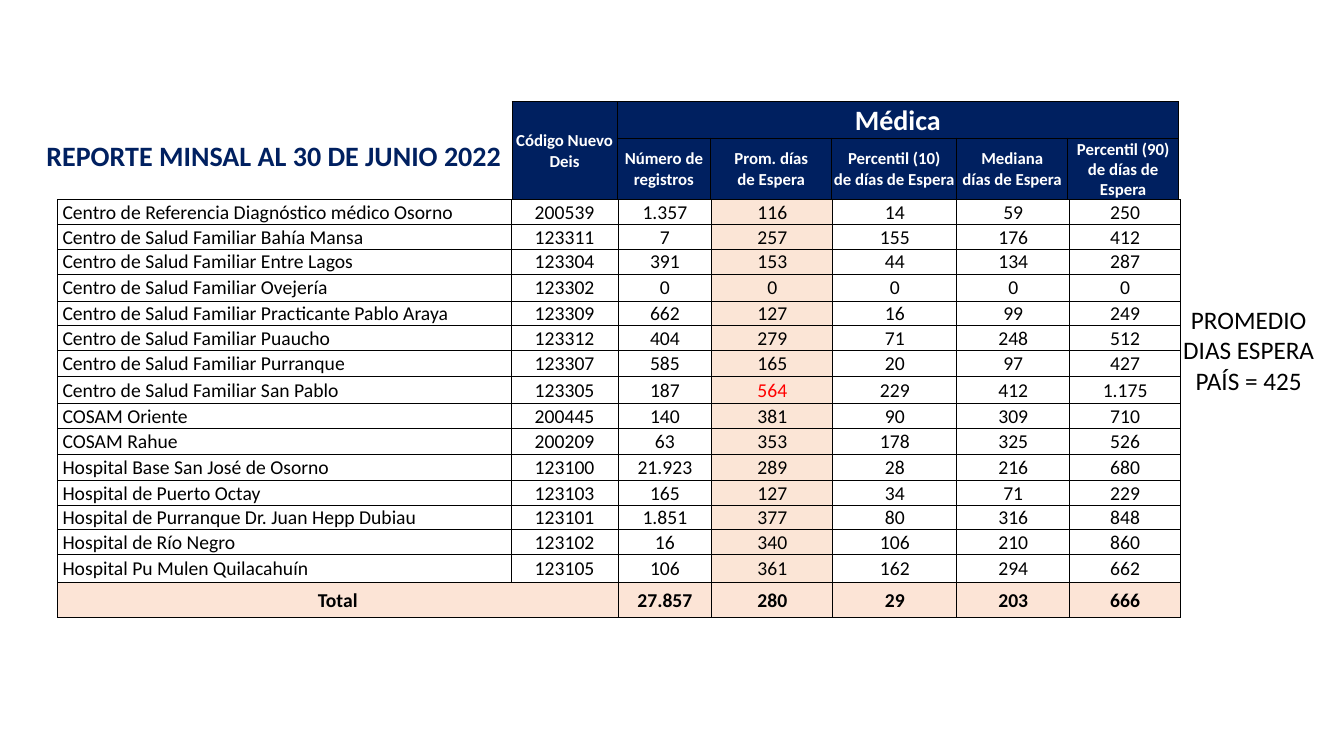
"""Build the waiting-list report slide with its medical specialities table."""
from lxml import etree
from pptx import Presentation
from pptx import util as u
from pptx.dml.color import RGBColor
from pptx.enum import text as t
from pptx.oxml import ns

PX = 9144
NAVY, BLACK, WHITE, RED = "002060", "000000", "FFFFFF", "FF0000"
PEACH, TOTAL_PEACH = "FBE5D6", "FCE4D6"
LEFT, CENTER = t.PP_ALIGN.LEFT, t.PP_ALIGN.CENTER

HEADER = [
    ["Código Nuevo Deis", "Médica", "", "", "", ""],
    ["", "Número de registros", "Prom. días\nde Espera", "Percentil (10)\nde días de Espera",
     "Mediana\ndías de Espera", "Percentil (90) de días de Espera"],
]
CENTROS = [
    ["Centro de Referencia Diagnóstico médico Osorno", "200539", "1.357", "116", "14", "59", "250"],
    ["Centro de Salud Familiar Bahía Mansa", "123311", "7", "257", "155", "176", "412"],
    ["Centro de Salud Familiar Entre Lagos", "123304", "391", "153", "44", "134", "287"],
    ["Centro de Salud Familiar Ovejería", "123302", "0", "0", "0", "0", "0"],
    ["Centro de Salud Familiar Practicante Pablo Araya", "123309", "662", "127", "16", "99", "249"],
    ["Centro de Salud Familiar Puaucho", "123312", "404", "279", "71", "248", "512"],
    ["Centro de Salud Familiar Purranque", "123307", "585", "165", "20", "97", "427"],
    ["Centro de Salud Familiar San Pablo", "123305", "187", "564", "229", "412", "1.175"],
    ["COSAM Oriente", "200445", "140", "381", "90", "309", "710"],
    ["COSAM Rahue", "200209", "63", "353", "178", "325", "526"],
    ["Hospital Base San José de Osorno", "123100", "21.923", "289", "28", "216", "680"],
    ["Hospital de Puerto Octay", "123103", "165", "127", "34", "71", "229"],
    ["Hospital de Purranque Dr. Juan Hepp Dubiau", "123101", "1.851", "377", "80", "316", "848"],
    ["Hospital de Río Negro", "123102", "16", "340", "106", "210", "860"],
    ["Hospital Pu Mulen Quilacahuín", "123105", "106", "361", "162", "294", "662"],
    ["Total", "", "27.857", "280", "29", "203", "666"],
]
TOTAL_ROW = len(CENTROS) - 1
PROM_COL = 3


def rgb(value):
    """Turn a hex string into a colour."""
    return RGBColor.from_string(value)


def header_style(row, col):
    """Give the look of one header cell."""
    size = 20 if (row, col) == (0, 1) else 12
    return dict(size=size, color=WHITE, bold=True, align=CENTER, fill=NAVY, inset=1)


def body_style(row, col):
    """Give the look of one body cell."""
    total = row == TOTAL_ROW
    name = col == 0 and not total
    return dict(
        size=14,
        color=RED if CENTROS[row][col] == "564" else BLACK,
        bold=total,
        align=LEFT if name else CENTER,
        fill=TOTAL_PEACH if total else PEACH if col == PROM_COL else None,
        inset=5 if name else 1,
    )


class Deck:
    """Hold the style and the current slide."""

    def __init__(self, width, height, font):
        """Open a presentation with one title-only slide."""
        self.prs = Presentation()
        self.prs.slide_width, self.prs.slide_height = width * PX, height * PX
        self.font = font
        self.s = self.prs.slides.add_slide(self.prs.slide_layouts[5])

    def add_text(self, tf, content, size, color, bold=False, align=LEFT):
        """Fill a text frame, one paragraph a line."""
        for i, line in enumerate(content.split("\n")):
            p = tf.add_paragraph() if i else tf.paragraphs[0]
            p.alignment = align
            r = p.add_run()
            r.text = line
            r.font.name, r.font.size, r.font.bold = self.font, u.Pt(size), bold
            r.font.color.rgb = rgb(color)

    def title(self, box, content, size, color):
        """Place and format the slide title."""
        sp = self.s.shapes.title
        sp.left, sp.top, sp.width, sp.height = [n * PX for n in box]
        tf = sp.text_frame
        tf.word_wrap, tf.auto_size = True, t.MSO_AUTO_SIZE.SHAPE_TO_FIT_TEXT
        tf.vertical_anchor = t.MSO_ANCHOR.TOP
        self.add_text(tf, content, size, color, bold=True)

    def label(self, box, content, size, color):
        """Add a centred text box."""
        tf = self.s.shapes.add_textbox(*[n * PX for n in box]).text_frame
        tf.word_wrap, tf.auto_size = True, t.MSO_AUTO_SIZE.SHAPE_TO_FIT_TEXT
        self.add_text(tf, content, size, color, align=CENTER)

    def border(self, cell, widths):
        """Draw the left, right, top and bottom edges of a cell."""
        tc_pr = cell._tc.get_or_add_tcPr()
        for side, width in zip("LRTB", widths):
            ln = etree.SubElement(tc_pr, ns.qn(f"a:ln{side}"), w=str(u.Pt(width)))
            fill = etree.SubElement(ln, ns.qn("a:solidFill"))
            etree.SubElement(fill, ns.qn("a:srgbClr"), val=BLACK)

    def table(self, left, top, cols, rows, data, style, merges, edge):
        """Add a table whose cell looks come from a style function."""
        box = [n * PX for n in (left, top, sum(cols), sum(rows))]
        tbl = self.s.shapes.add_table(len(rows), len(cols), *box).table
        tbl.first_row = tbl.horz_banding = False
        for column, width in zip(tbl.columns, cols):
            column.width = width * PX
        for line, height in zip(tbl.rows, rows):
            line.height = height * PX
        for first, last in merges:
            tbl.cell(*first).merge(tbl.cell(*last))
        for row, values in enumerate(data):
            for col, value in enumerate(values):
                cell, look = tbl.cell(row, col), style(row, col)
                outer = (col == 0, col == len(cols) - 1, row == 0, False)
                self.border(cell, [edge if out else 0.5 for out in outer])
                fill, inset = look.pop("fill"), look.pop("inset")
                if fill:
                    cell.fill.solid()
                    cell.fill.fore_color.rgb = rgb(fill)
                else:
                    cell.fill.background()
                cell.vertical_anchor = t.MSO_ANCHOR.MIDDLE
                cell.margin_left, cell.margin_right = inset * PX, PX
                cell.margin_top, cell.margin_bottom = PX, 0
                if value:
                    self.add_text(cell.text_frame, value, **look)


def main():
    """Build and save the slide."""
    deck = Deck(1333, 750, "Calibri")
    deck.table(57, 198, [450, 106, 93, 120, 123, 112, 110],
               [25, 23, 20, 27, 24, 24, 26, 27, 23, 26, 26, 23, 23, 23, 28, 35],
               CENTROS, body_style, [((TOTAL_ROW, 0), (TOTAL_ROW, 1))], 0.5)
    deck.table(508, 101, [104, 93, 120, 124, 110, 110], [36, 61],
               HEADER, header_style, [((0, 0), (1, 0)), ((0, 1), (0, 5))], 1)
    deck.title((36, 132, 513, 44), "REPORTE MINSAL AL 30 DE JUNIO 2022", 20, NAVY)
    deck.label((1155, 297, 167, 101), "PROMEDIO DIAS ESPERA PAÍS = 425", 18, BLACK)
    deck.prs.save("out.pptx")


if __name__ == "__main__":
    main()
